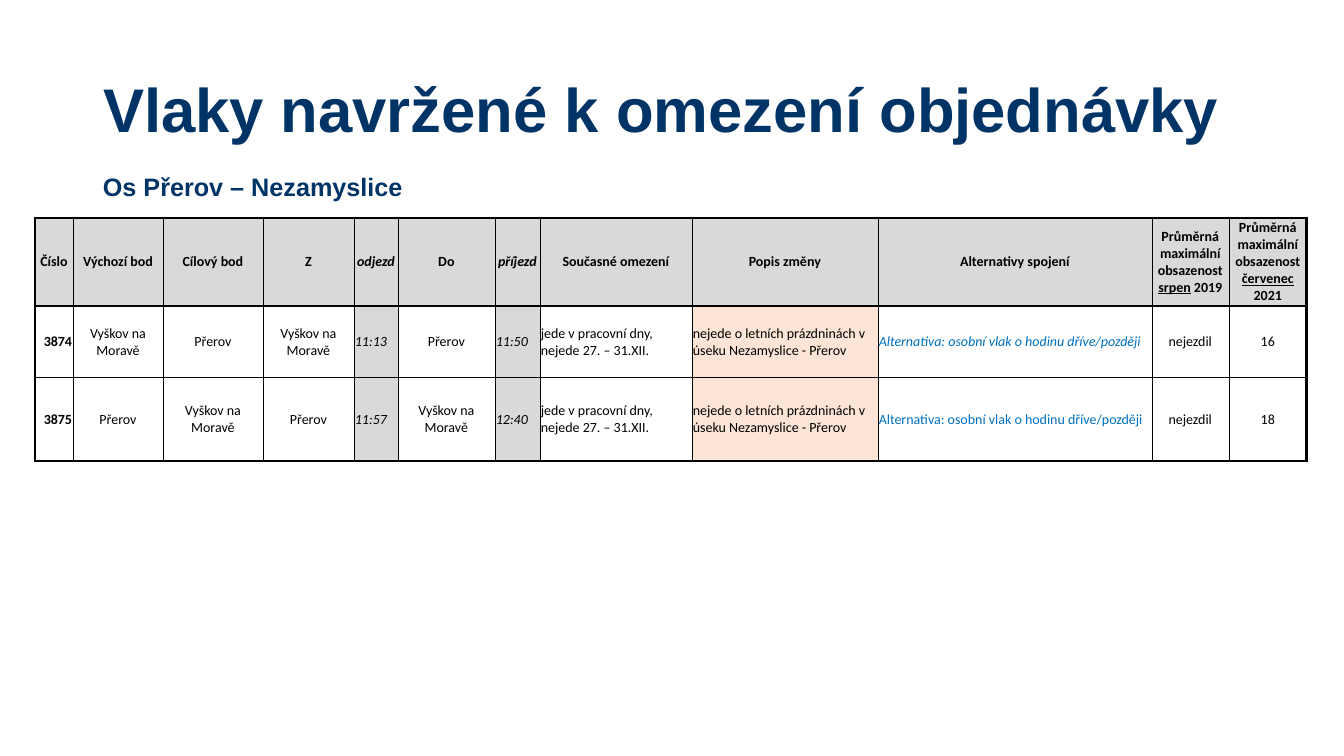
from lxml.etree import SubElement, fromstring
from pptx import Presentation
from pptx.dml.color import RGBColor
from pptx.enum.text import MSO_ANCHOR as Anchor, MSO_AUTO_SIZE as Fit, PP_ALIGN as Align
from pptx.util import Pt

NAVY = RGBColor(0x00, 0x33, 0x66)
BLACK = RGBColor(0x00, 0x00, 0x00)
BLUE = RGBColor(0x00, 0x70, 0xC0)
GREY = RGBColor(0xD9, 0xD9, 0xD9)
PEACH = RGBColor(0xFC, 0xE4, 0xD6)

TITLE = "Vlaky navržené k omezení objednávky"
ROUTE = "Os Přerov – Nezamyslice"
LOAD = "Průměrná maximální obsazenost "
HEAD = ["Číslo", "Výchozí bod", "Cílový bod", "Z", "odjezd", "Do", "příjezd",
        "Současné omezení", "Popis změny", "Alternativy spojení",
        (LOAD, "srpen", " 2019"), (LOAD, "červenec", " 2021")]
TOWN = "Vyškov na Moravě"
LIMIT = "jede v pracovní dny, nejede 27. – 31.XII."
CHANGE = "nejede o letních prázdninách v úseku Nezamyslice - Přerov"
OTHER = "Alternativa: osobní vlak o hodinu dříve/později"
TRAINS = [
    ["3874", TOWN, "Přerov", TOWN, "11:13", "Přerov", "11:50",
     LIMIT, CHANGE, OTHER, "nejezdil", "16"],
    ["3875", "Přerov", TOWN, "Přerov", "11:57", TOWN, "12:40",
     LIMIT, CHANGE, OTHER, "nejezdil", "18"],
]
ROWS = [HEAD] + TRAINS
WIDTHS = [38, 90, 100, 91, 44, 97, 45, 152, 186, 274, 77, 78]
HEIGHTS = [88, 71, 84]
NUMBER, CHANGES, OTHERS = 0, 8, 9
TIMES = (4, 6)
LEFT = (4, 6, 7, 8, 9)
THICK, THIN = 2.25, 0.25
NS = "http://schemas.openxmlformats.org/drawingml/2006/main"


def px(n):
    return round(n * 914400 / 100.8)


def place(shape, x, y, w, h):
    shape.left, shape.top, shape.width, shape.height = map(px, (x, y, w, h))


def write(para, text, font, size, color, bold=False, italic=False):
    run = para.add_run()
    run.text = text
    face = run.font
    face.name, face.size, face.bold, face.italic = font, Pt(size), bold, italic
    face.color.rgb = color
    return run


def edge(cell, row, col):
    last_row, last_col = len(ROWS) - 1, len(WIDTHS) - 1
    heavy = {"L": col == 0, "R": col == last_col,
             "T": row < 2, "B": row in (0, last_row)}
    props = cell._tc.get_or_add_tcPr()
    for spot, (side, thick) in enumerate(heavy.items()):
        width = Pt(THICK if thick else THIN)
        line = fromstring(f'<a:ln{side} xmlns:a="{NS}" w="{width}"/>')
        fill = SubElement(line, f"{{{NS}}}solidFill")
        SubElement(fill, f"{{{NS}}}srgbClr", val=str(BLACK))
        props.insert(spot, line)


def paint(cell, row, col):
    if row == 0 or col in TIMES:
        shade = GREY
    else:
        shade = PEACH if col == CHANGES else None
    if shade is None:
        cell.fill.background()
    else:
        cell.fill.solid()
        cell.fill.fore_color.rgb = shade


def fill_cell(cell, row, col, text):
    pad = px(1 if row else 0)
    cell.margin_left = cell.margin_top = cell.margin_right = pad
    cell.margin_bottom = 0
    cell.vertical_anchor = Anchor.MIDDLE
    para = cell.text_frame.paragraphs[0]
    para.alignment = Align.CENTER
    if row and col == NUMBER:
        para.alignment = Align.RIGHT
    elif row and col in LEFT:
        para.alignment = Align.LEFT
    color = BLUE if row and col == OTHERS else BLACK
    bold = row == 0 or col == NUMBER
    italic = col in TIMES or (row == 1 and col == OTHERS)
    parts = (text,) if isinstance(text, str) else text
    for i, part in enumerate(parts):
        run = write(para, part, "Calibri", 10, color, bold, italic)
        if i == 1:
            run.font.underline = True
    paint(cell, row, col)
    edge(cell, row, col)


def main():
    """Build the slide of trains proposed for reduction."""
    deck = Presentation()
    deck.slide_width, deck.slide_height = px(1344), px(756)
    slide = deck.slides.add_slide(deck.slide_layouts[5])

    title = slide.shapes.title
    place(title, 93, 40, 1159, 146)
    frame = title.text_frame
    frame.auto_size, frame.vertical_anchor = Fit.NONE, Anchor.MIDDLE
    para = frame.paragraphs[0]
    para.alignment, para.line_spacing = Align.LEFT, 0.9
    write(para, TITLE, "Arial", 44, NAVY, True)

    box = slide.shapes.add_textbox(px(93), px(166), px(672), px(40))
    box.text_frame.word_wrap = True
    write(box.text_frame.paragraphs[0], ROUTE, "Arial", 18, NAVY, True)

    table = slide.shapes.add_table(len(ROWS), len(WIDTHS), px(35), px(218),
                                   px(sum(WIDTHS)), px(sum(HEIGHTS))).table
    table.first_row = table.horz_banding = False
    for col, width in zip(table.columns, WIDTHS):
        col.width = px(width)
    for row, height in zip(table.rows, HEIGHTS):
        row.height = px(height)
    for r, texts in enumerate(ROWS):
        for c, text in enumerate(texts):
            fill_cell(table.cell(r, c), r, c, text)
    deck.save("out.pptx")


if __name__ == "__main__":
    main()
